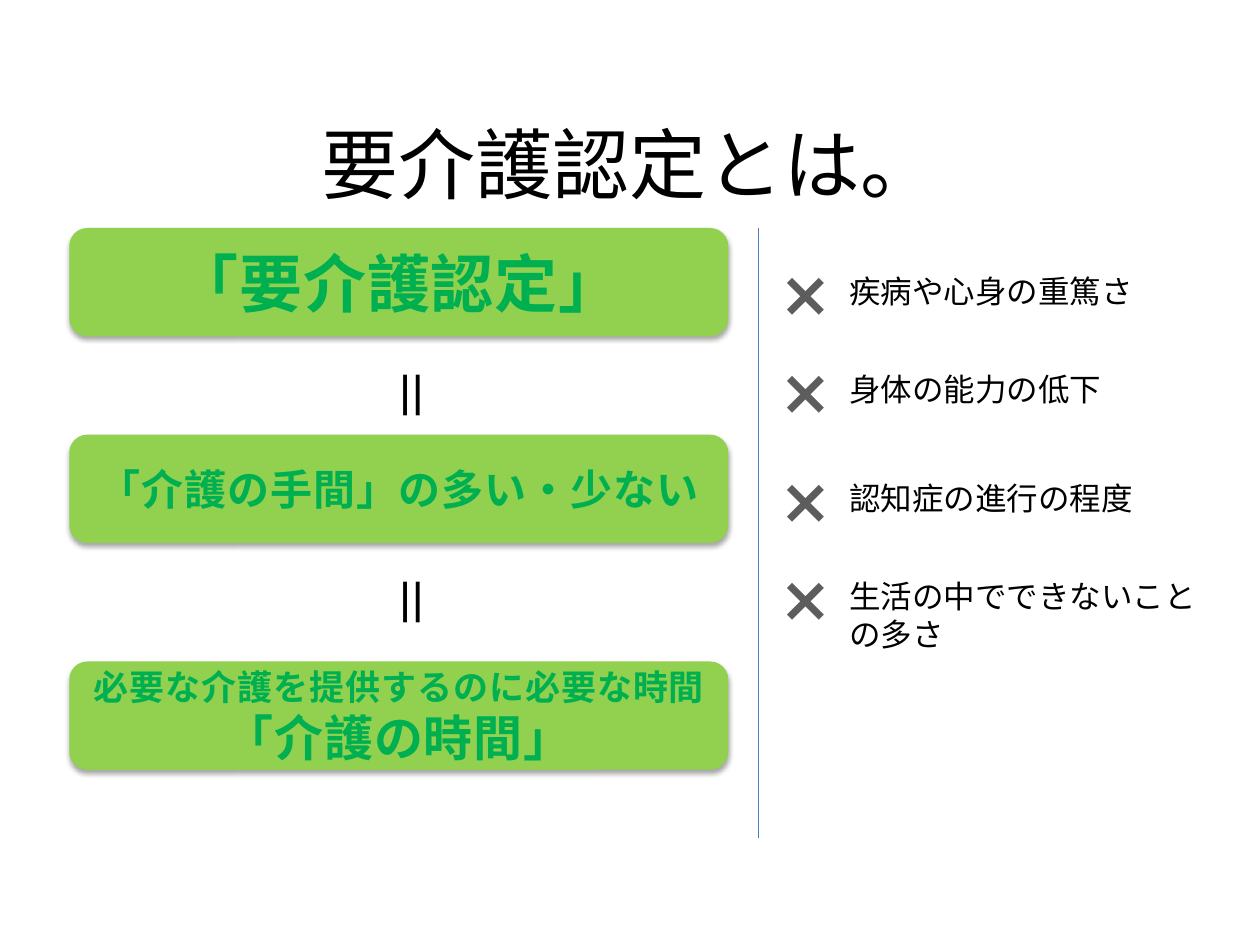
from dataclasses import dataclass

from lxml import etree
from pptx import Presentation
from pptx import util as u
from pptx.dml.color import RGBColor
from pptx.enum import shapes, text
from pptx.oxml import parse_xml
from pptx.oxml.ns import nsdecls, qn


@dataclass(frozen=True)
class Theme:
    title_font: str = "Calibri"
    body_font: str = "DejaVu Sans"
    asian_font: str = "Noto Sans CJK JP"
    ink: str = "000000"
    box_fill: str = "92D050"
    box_text: str = "00B050"
    divider: str = "4B7EBC"
    mark_outline: str = "FFFFFF"
    mark_stops: tuple = ((0, "555555"), (49, "5D5D5D"), (50, "000000"),
                         (95, "000000"), (100, "000000"))
    title_size: int = 44
    mark_size: int = 36
    equals_size: int = 32
    item_size: int = 18


THEME = Theme()

# Box top, then its lines with their sizes
BOXES = (
    (130.3, (("「要介護認定」", 36),)),
    (248.4, (("「介護の手間」の多い・少ない", 24),)),
    (378, (("必要な介護を提供するのに必要な時間", 20), ("「介護の時間」", 28))),
)
EQUALS_TOPS = (203, 321.1)
ITEMS = (
    (141.1, "疾病や心身の重篤さ"),
    (197.3, "身体の能力の低下"),
    (259.6, "認知症の進行の程度"),
    (315.4, "生活の中でできないことの多さ"),
)


def write(para, words, size, font, color=THEME.ink, bold=False):
    """Fill a paragraph and return the properties of its run."""
    span = para.add_run()
    span.text = words
    para.font.size = u.Pt(size)
    para.font.name = font
    para.font.bold = bold
    para.font.color.rgb = RGBColor.from_string(color)
    props = span._r.get_or_add_rPr()
    etree.SubElement(props, qn("a:ea")).set("typeface", THEME.asian_font)
    return props


def add_text(page, place, words, size, font):
    box = page.shapes.add_textbox(*map(u.Pt, place))
    box.text_frame.word_wrap = True
    props = write(box.text_frame.paragraphs[0], words, size, font)
    return box, props


def add_title(page, words):
    box, _ = add_text(page, (36, 48, 648, 90), words,
                      THEME.title_size, THEME.title_font)
    box.text_frame.vertical_anchor = text.MSO_ANCHOR.MIDDLE
    box.text_frame.paragraphs[0].alignment = text.PP_ALIGN.CENTER


def add_box(page, top, lines):
    box = page.shapes.add_shape(shapes.MSO_SHAPE.ROUNDED_RECTANGLE,
                                *map(u.Pt, (39.6, top, 376.6, 61.9)))
    box.fill.solid()
    box.fill.fore_color.rgb = RGBColor.from_string(THEME.box_fill)
    box.line.fill.background()
    # Soft shadow straight below
    box._element.spPr.append(parse_xml(
        f'<a:effectLst {nsdecls("a")}>'
        f'<a:outerShdw blurRad="{u.Pt(3.1)}" dist="{u.Pt(1.8)}" dir="5400000" rotWithShape="0">'
        f'<a:srgbClr val="{THEME.ink}"><a:alpha val="35000"/></a:srgbClr>'
        '</a:outerShdw></a:effectLst>'))
    frame = box.text_frame
    frame.word_wrap = True
    frame.vertical_anchor = text.MSO_ANCHOR.MIDDLE
    for index, (words, size) in enumerate(lines):
        para = frame.add_paragraph() if index else frame.paragraphs[0]
        para.alignment = text.PP_ALIGN.CENTER
        props = write(para, words, size, THEME.asian_font, THEME.box_text, True)
        props.set("spc", "50")


def add_equals(page, top):
    box, _ = add_text(page, (205.2, top, 53.3, 39.6), "＝",
                      THEME.equals_size, THEME.body_font)
    box.text_frame._txBody.bodyPr.set("vert", "eaVert")


def add_divider(page):
    line = page.shapes.add_connector(shapes.MSO_CONNECTOR.STRAIGHT,
                                     *map(u.Pt, (433.4, 130.3, 433.4, 478.8)))
    line.line.color.rgb = RGBColor.from_string(THEME.divider)
    line.line.width = u.Pt(0.75)
    etree.SubElement(line._element.spPr, qn("a:effectLst"))


def add_item(page, top, words):
    # Cross with a gradient fill and a thin outline
    box, props = add_text(page, (438.5, top, 56.2, 51.1), "×",
                          THEME.mark_size, THEME.body_font)
    box.text_frame.paragraphs[0].font.bold = True
    stops = "".join(f'<a:gs pos="{place * 1000}"><a:srgbClr val="{color}"/></a:gs>'
                    for place, color in THEME.mark_stops)
    props.insert(0, parse_xml(
        f'<a:ln {nsdecls("a")} w="{u.Pt(1.4)}"><a:solidFill>'
        f'<a:srgbClr val="{THEME.mark_outline}"/></a:solidFill></a:ln>'))
    props.insert(1, parse_xml(
        f'<a:gradFill {nsdecls("a")}><a:gsLst>{stops}</a:gsLst>'
        '<a:lin ang="5400000" scaled="0"/></a:gradFill>'))
    # Wording beside the cross
    height = 51.1 if len(words) > 10 else 28.8
    add_text(page, (478.1, top + 10.7, 219.6, height), words,
             THEME.item_size, THEME.body_font)


def main():
    deck = Presentation()
    deck.slide_width, deck.slide_height = u.Pt(720), u.Pt(540)
    page = deck.slides.add_slide(deck.slide_layouts[6])

    add_title(page, "要介護認定とは。")

    # Left: the chain of equal meanings
    for top, lines in BOXES:
        add_box(page, top, lines)
    add_divider(page)
    for top in EQUALS_TOPS:
        add_equals(page, top)

    # Right: what it does not measure
    for top, words in ITEMS:
        add_item(page, top, words)

    deck.save("out.pptx")


if __name__ == "__main__":
    main()
